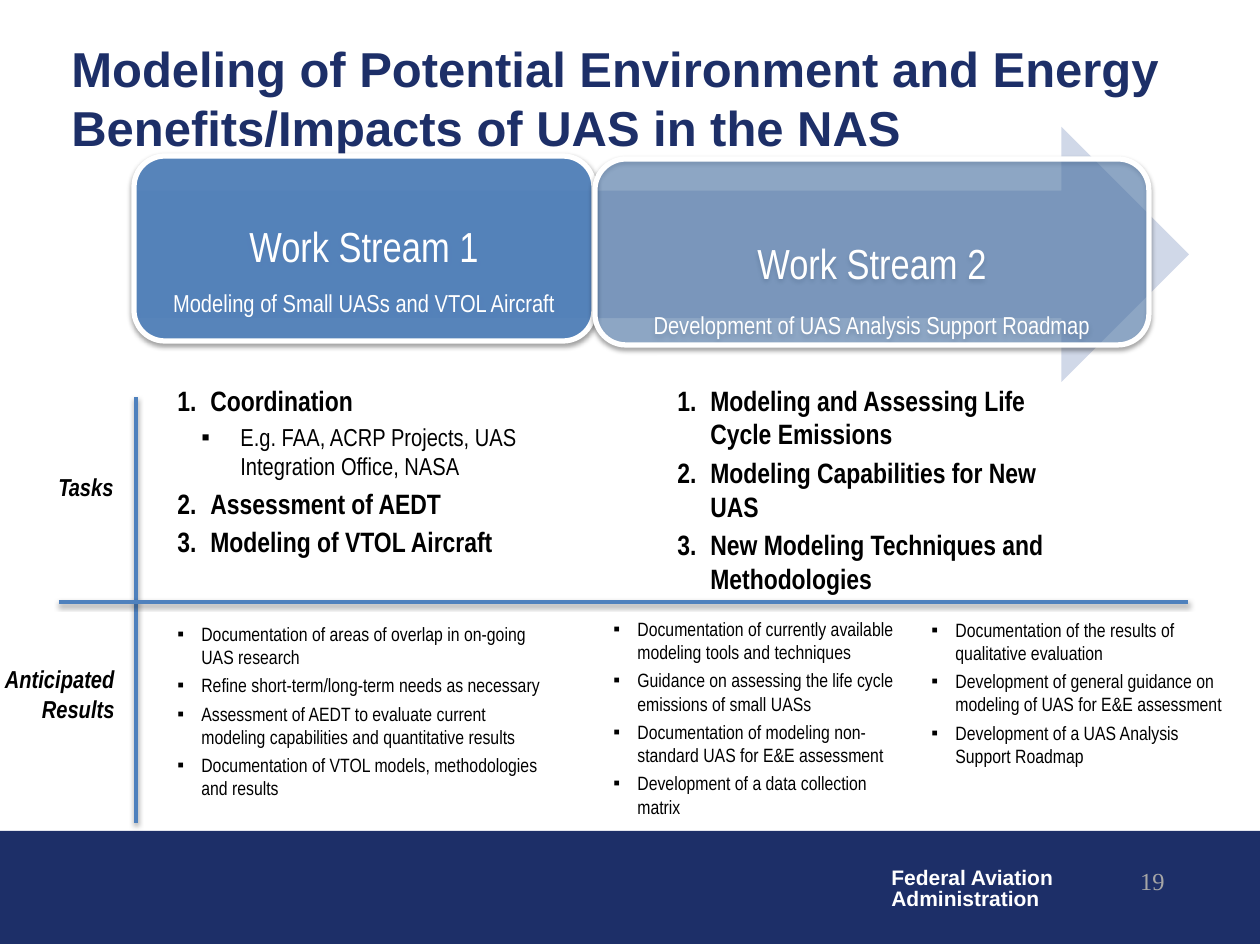
from lxml.etree import SubElement
from pptx import Presentation
from pptx.dml.color import RGBColor
from pptx.enum.shapes import MSO_CONNECTOR, MSO_SHAPE
from pptx.enum.text import MSO_ANCHOR, PP_ALIGN
from pptx.oxml.ns import qn
from pptx.util import Emu, Pt

SCALE = 914400 / 126
COLORS = {
    "navy": "1D2F68", "blue": "4F81BD", "pale": "D0D8E8", "white": "FFFFFF",
    "black": "000000", "gray": "A6A6A6",
}
FORMATS = {
    "title": {"name": "Arial", "size": Pt(28), "bold": True, "color": "navy"},
    "agency": {"name": "Arial", "size": Pt(12), "bold": True, "color": "white"},
    "number": {"name": "Times New Roman", "size": Pt(14), "color": "gray"},
    "stream": {"name": "Arial Narrow", "size": Pt(24), "color": "white"},
    "subtitle": {"name": "Arial Narrow", "size": Pt(14), "color": "white"},
    "label": {"name": "Arial Narrow", "size": Pt(14), "bold": True, "italic": True, "color": "black"},
    "task": {"name": "Arial Narrow", "size": Pt(16), "bold": True, "color": "black"},
    "detail": {"name": "Arial Narrow", "size": Pt(14), "bold": False, "color": "black"},
    "result": {"name": "Arial Narrow", "size": Pt(11), "color": "black"},
}
LISTS = {
    "task": {"margin": 33, "hanging": 33, "bullet": "1.", "level": 0},
    "detail": {"margin": 63, "hanging": 39, "bullet": "▪", "level": 1},
    "result": {"margin": 24, "hanging": 24, "bullet": "▪", "level": 0},
}
STREAMS = [
    {"box": (134, 156, 460, 185), "title": "Work Stream 1",
     "subtitle": "Modeling of Small UASs and VTOL Aircraft",
     "opacity": 90, "inset": 55, "gap": 10},
    {"box": (595, 159, 554, 186), "title": "Work Stream 2",
     "subtitle": "Development of UAS Analysis Support Roadmap",
     "opacity": 50, "inset": 69, "gap": 13},
]
LABELS = [
    ((-33, 466, 159, 43), ["Tasks"]),
    ((-32, 658, 159, 72), ["Anticipated", "Results"]),
]
TASKS = [
    ((165, 377, 436, 218), [
        ("task", "Coordination"),
        ("detail", "E.g. FAA, ACRP Projects, UAS Integration Office, NASA"),
        ("task", "Assessment of AEDT"),
        ("task", "Modeling of VTOL Aircraft"),
    ]),
    ((665, 377, 435, 253), [
        ("task", "Modeling and Assessing Life Cycle Emissions"),
        ("task", "Modeling Capabilities for New UAS"),
        ("task", "New Modeling Techniques and Methodologies"),
    ]),
]
RESULTS = [
    ((165, 616, 388, 192), [
        "Documentation of areas of overlap in on-going UAS research",
        "Refine short-term/long-term needs as necessary",
        "Assessment of AEDT to evaluate current modeling capabilities and quantitative results",
        "Documentation of VTOL models, methodologies and results",
    ]),
    ((601, 611, 319, 244), [
        "Documentation of currently available modeling tools and techniques",
        "Guidance on assessing the life cycle emissions of small UASs",
        "Documentation of modeling non-standard UAS for E&E assessment",
        "Development of a data collection matrix",
    ]),
    ((919, 612, 319, 164), [
        "Documentation of the results of qualitative evaluation",
        "Development of general guidance on modeling of UAS for E&E assessment",
        "Development of a UAS Analysis Support Roadmap",
    ]),
]


def px(length):
    return Emu(round(length * SCALE))


def color(name):
    return RGBColor.from_string(COLORS[name])


def add_shadow(shape):
    effects = SubElement(shape._element.spPr, qn("a:effectLst"))
    shadow = SubElement(effects, qn("a:outerShdw"), blurRad=str(Pt(3.1)),
                        dist=str(Pt(1.6)), dir="5400000", rotWithShape="0")
    black = SubElement(shadow, qn("a:srgbClr"), val=COLORS["black"])
    SubElement(black, qn("a:alpha"), val="38000")


def add_block(slide, kind, box, fill):
    shape = slide.shapes.add_shape(kind, *map(px, box))
    shape.fill.solid()
    shape.fill.fore_color.rgb = color(fill)
    shape.line.fill.background()
    return shape


def set_bullet(paragraph, style):
    properties = paragraph._p.get_or_add_pPr()
    properties.set("marL", str(px(style["margin"])))
    properties.set("indent", str(-px(style["hanging"])))
    if style["bullet"] == "1.":
        SubElement(properties, qn("a:buFont"), typeface="+mj-lt")
        SubElement(properties, qn("a:buAutoNum"), type="arabicPeriod")
    else:
        SubElement(properties, qn("a:buFont"), typeface="Arial")
        SubElement(properties, qn("a:buChar"), char=style["bullet"])
    paragraph.level = style["level"]


def write(frame, lines, **layout):
    for index, (kind, text) in enumerate(lines):
        paragraph = frame.add_paragraph() if index else frame.paragraphs[0]
        if kind in LISTS:
            set_bullet(paragraph, LISTS[kind])
        for name, value in layout.items():
            if name != "space_before" or index:
                setattr(paragraph, name, value)
        run = paragraph.add_run()
        run.text = text
        for name, value in FORMATS[kind].items():
            if name == "color":
                run.font.color.rgb = color(value)
            else:
                setattr(run.font, name, value)


def add_text(slide, box, lines, wrap=True, anchor=MSO_ANCHOR.TOP, **layout):
    frame = slide.shapes.add_textbox(*map(px, box)).text_frame
    frame.word_wrap = wrap
    frame.vertical_anchor = anchor
    write(frame, lines, **layout)


def add_footer(slide, box):
    left, top, width, height = box
    band = add_block(slide, MSO_SHAPE.RECTANGLE, box, "navy")
    band.shadow.inherit = False
    add_text(slide, (left + 879, top + 31, 189, 55),
             [("agency", "Federal Aviation"), ("agency", "Administration")],
             wrap=False, line_spacing=0.85)
    add_text(slide, (left + 915, top + 29, 262, 63), [("number", "19")], alignment=PP_ALIGN.RIGHT)


def add_title(slide, box):
    text = "Modeling of Potential Environment and Energy Benefits/Impacts of UAS in the NAS"
    add_text(slide, box, [("title", text)], anchor=MSO_ANCHOR.MIDDLE)


def add_stream(slide, box, stream):
    shape = add_block(slide, MSO_SHAPE.ROUNDED_RECTANGLE, box, "blue")
    fill = shape._element.spPr.find(qn("a:solidFill"))
    SubElement(fill[0], qn("a:alpha"), val=str(stream["opacity"] * 1000))
    shape.line.color.rgb = color("white")
    shape.line.width = Pt(3)
    add_shadow(shape)
    frame = shape.text_frame
    frame.word_wrap = True
    frame.vertical_anchor = MSO_ANCHOR.TOP
    frame.margin_top = px(stream["inset"])
    write(frame, [("stream", stream["title"]), ("subtitle", stream["subtitle"])],
          alignment=PP_ALIGN.CENTER, space_before=Pt(stream["gap"]))


def add_streams(slide, box):
    arrow = add_block(slide, MSO_SHAPE.RIGHT_ARROW, box, "pale")
    arrow.shadow.inherit = False
    for stream in STREAMS:
        add_stream(slide, stream["box"], stream)


def add_rule(slide, start, end):
    rule = slide.shapes.add_connector(MSO_CONNECTOR.STRAIGHT, *map(px, start + end))
    rule.line.color.rgb = color("blue")
    rule.line.width = Pt(2)
    add_shadow(rule)


def add_matrix(slide, box):
    left, top, width, height = box
    add_rule(slide, (left + 77, top + height), (left + 77, top))
    add_rule(slide, (left, top + 205), (left + width, top + 205))
    for place, words in LABELS:
        add_text(slide, place, [("label", word) for word in words], alignment=PP_ALIGN.RIGHT)
    for place, lines in TASKS:
        add_text(slide, place, lines, space_before=Pt(3))
    for place, items in RESULTS:
        add_text(slide, place, [("result", item) for item in items], space_after=Pt(3))


def main():
    presentation = Presentation()
    presentation.slide_width = px(1260)
    presentation.slide_height = px(945)
    slide = presentation.slides.add_slide(presentation.slide_layouts[6])
    add_footer(slide, (0, 831, 1260, 113))
    add_title(slide, (59, 55, 1168, 84))
    add_streams(slide, (134, 127, 1055, 255))
    add_matrix(slide, (59, 397, 1129, 426))
    presentation.save("out.pptx")


if __name__ == "__main__":
    main()
